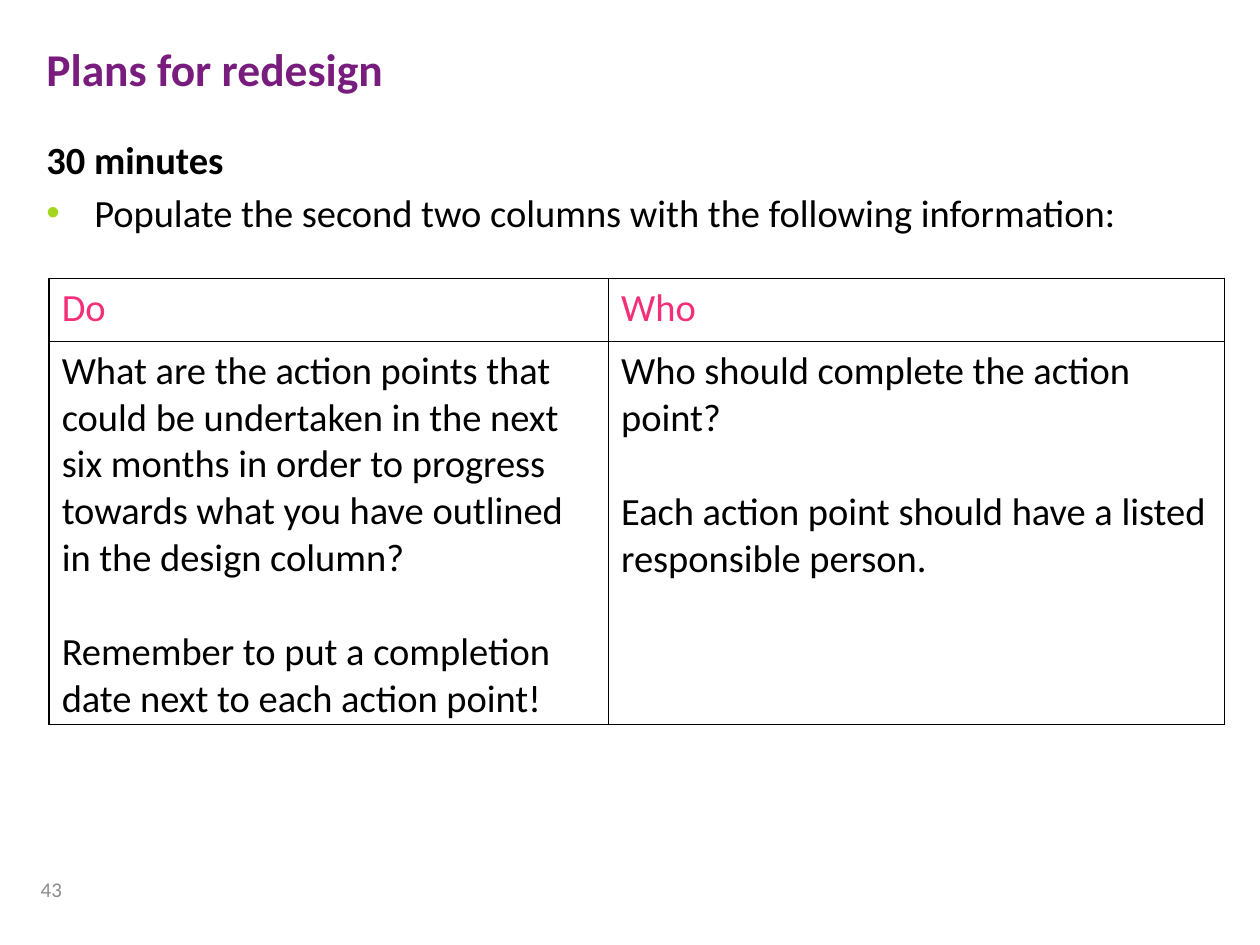
import pptx
import pptx.dml.color
import pptx.enum.text
import pptx.oxml
import pptx.oxml.ns
import pptx.util
from pptx.util import Inches

RGBColor = pptx.dml.color.RGBColor
PURPLE = RGBColor(0x78, 0x1D, 0x7D)
PINK = RGBColor(0xF3, 0x2F, 0x79)
GREEN = RGBColor(0xA4, 0xD6, 0x20)
GREY = RGBColor(0x8C, 0x8C, 0x8C)
BLACK = RGBColor(0, 0, 0)
NS = pptx.oxml.ns.nsdecls("a")


def add_text(tf, text, size, color, bold=False, before=0, first=True):
    p = tf.paragraphs[0] if first else tf.add_paragraph()
    p.space_before = pptx.util.Pt(before)
    r = p.add_run()
    r.text = text
    r.font.color.rgb = color
    for name, value in {"name": "Calibri", "size": pptx.util.Pt(size), "bold": bold}.items():
        setattr(r.font, name, value)
    return p


def add_box(left, top, width, height):
    tf = s.shapes.add_textbox(Inches(left), Inches(top), Inches(width), Inches(height)).text_frame
    tf.word_wrap = True
    return tf


prs = pptx.Presentation()
prs.slide_width, prs.slide_height = Inches(10), Inches(7.5)
s = prs.slides.add_slide(prs.slide_layouts[6])

# Slide number
tf = add_box(0.12, 6.86, 0.47, 0.4)
tf.vertical_anchor = pptx.enum.text.MSO_ANCHOR.MIDDLE
p = add_text(tf, "43", 12, GREY)
p.alignment = pptx.enum.text.PP_ALIGN.RIGHT

# Title
add_text(add_box(0.27, 0.28, 7.48, 0.63), "Plans for redesign", 26, PURPLE, bold=True, before=5)

# Timing and instruction
tf = add_box(0.27, 1.03, 9.45, 1.1)
add_text(tf, "30 minutes", 22, BLACK, bold=True, before=4)
p = add_text(tf, "Populate the second two columns with the following information:",
             22, BLACK, before=4, first=False)
pPr = p._p.get_or_add_pPr()
pPr.set("marL", str(Inches(0.38)))
pPr.set("indent", str(-Inches(0.38)))
for xml in (f'<a:buClr {NS}><a:srgbClr val="{GREEN}"/></a:buClr>',
            f'<a:buFont {NS} typeface="Arial"/>',
            f'<a:buChar {NS} char="•"/>'):
    pPr.append(pptx.oxml.parse_xml(xml))

# Action table
rows = [
    [["Do"], ["Who"]],
    [["What are the action points that could be undertaken in the next six months "
      "in order to progress towards what you have outlined in the design column?",
      "Remember to put a completion date next to each action point!"],
     ["Who should complete the action point?",
      "Each action point should have a listed responsible person."]],
]
table = s.shapes.add_table(2, 2, Inches(0.39), Inches(2.21), Inches(9.33), Inches(3.54)).table
for name in ("first_row", "horz_banding"):
    setattr(table, name, False)
for col, width in zip(table.columns, (4.44, 4.89)):
    col.width = Inches(width)
for row, height in zip(table.rows, (0.5, 3.04)):
    row.height = Inches(height)

for i, row in enumerate(rows):
    for j, texts in enumerate(row):
        cell = table.cell(i, j)
        cell.fill.background()
        for k, text in enumerate(texts):
            add_text(cell.text_frame, text, 22, BLACK if i else PINK,
                     before=27 if k else 0, first=k == 0)
        tcPr = cell._tc.get_or_add_tcPr()
        for n, side in enumerate("LRTB"):
            tcPr.insert(n, pptx.oxml.parse_xml(
                f'<a:ln{side} {NS} w="{pptx.util.Pt(1)}"><a:solidFill>'
                f'<a:srgbClr val="{BLACK}"/></a:solidFill></a:ln{side}>'))

prs.save("out.pptx")
